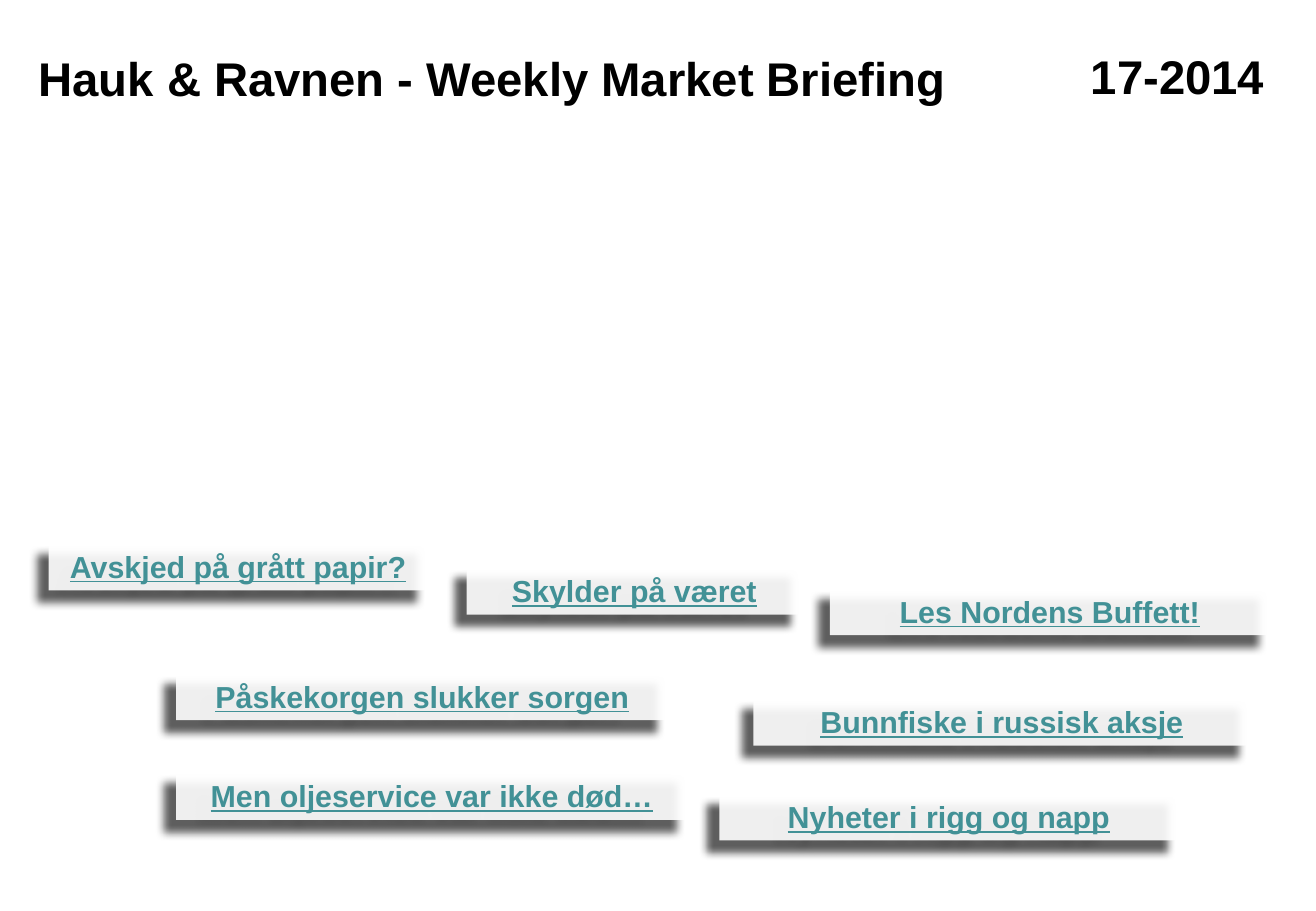
from dataclasses import dataclass

from lxml.etree import SubElement
from pptx import Presentation
from pptx.dml.color import RGBColor
from pptx.enum.shapes import MSO_SHAPE as Shape
from pptx.enum.text import MSO_ANCHOR as Anchor, MSO_AUTO_SIZE as AutoSize, PP_ALIGN as Align
from pptx.oxml.ns import qn
from pptx.util import Inches, Pt


@dataclass(frozen=True)
class Theme:
    font: str = "Arial"
    ink: str = "000000"
    link: str = "429196"
    panel: str = "FFFFFF"
    panel_opacity: int = 90
    shadow_opacity: int = 70
    shadow_blur: int = 5
    shadow_distance: int = 10
    shadow_angle: int = 135
    title_size: int = 28
    link_size: int = 18


THEME = Theme()
BLANK_LAYOUT = 6
HEADLINE_HEIGHT = 5.33

# Left, top, width and height in percent of the slide
TITLE_BOX = (2.03, 3.87, 87.26, 8.4)
ISSUE_BOX = (81.99, 4.53, 15.24, 7.6)

# Text, then left, top and width in percent of the slide
HEADLINES = [
    ("Avskjed på grått papir?", 3.69, 59.47, 28.81),
    ("Skylder på været", 35.46, 62.13, 25.48),
    ("Påskekorgen slukker sorgen", 13.39, 73.73, 37.4),
    ("Les Nordens Buffett!", 63.07, 64.4, 33.43),
    ("Bunnfiske i russisk aksje", 57.25, 76.53, 37.77),
    ("Men oljeservice var ikke død…", 13.39, 84.67, 38.87),
    ("Nyheter i rigg og napp", 54.66, 86.93, 34.9),
]


def place(deck, left, top, width, height):
    """Turn percentages of the slide into lengths."""
    across, down = deck.slide_width / 100, deck.slide_height / 100
    return round(left * across), round(top * down), round(width * across), round(height * down)


def write(box, text, color, frame_format, align=None, **font_format):
    frame = box.text_frame
    for name, value in frame_format.items():
        setattr(frame, name, value)
    para = frame.paragraphs[0]
    para.alignment = align
    span = para.add_run()
    span.text = text
    for name, value in {"name": THEME.font, "bold": True, **font_format}.items():
        setattr(span.font, name, value)
    span.font.color.rgb = RGBColor.from_string(color)


def add_alpha(color_element, percent):
    SubElement(color_element, qn("a:alpha"), val=str(percent * 1000))


def add_shadow(box):
    box.shadow.inherit = False
    effects = box._element.spPr.find(qn("a:effectLst"))
    shadow = SubElement(
        effects, qn("a:outerShdw"),
        blurRad=str(Pt(THEME.shadow_blur)), dist=str(Pt(THEME.shadow_distance)),
        dir=str(THEME.shadow_angle * 60000), algn="tr", rotWithShape="0")
    add_alpha(SubElement(shadow, qn("a:srgbClr"), val=THEME.ink), THEME.shadow_opacity)


def add_heading(page, area, text, **frame_format):
    box = page.shapes.add_textbox(*area)
    write(box, text, THEME.ink, frame_format, size=Pt(THEME.title_size))


def add_headline(page, area, text):
    box = page.shapes.add_shape(Shape.RECTANGLE, *area)
    box.fill.solid()
    box.fill.fore_color.rgb = RGBColor.from_string(THEME.panel)
    add_alpha(box._element.spPr.find(qn("a:solidFill"))[0], THEME.panel_opacity)
    box.line.fill.background()
    add_shadow(box)
    frame_format = {"word_wrap": True, "vertical_anchor": Anchor.TOP,
                    "auto_size": AutoSize.SHAPE_TO_FIT_TEXT}
    write(box, text, THEME.link, frame_format, Align.CENTER,
          size=Pt(THEME.link_size), underline=True)


def build_cover(deck):
    page = deck.slides.add_slide(deck.slide_layouts[BLANK_LAYOUT])
    add_heading(page, place(deck, *TITLE_BOX), "Hauk & Ravnen - Weekly Market Briefing",
                word_wrap=True, vertical_anchor=Anchor.BOTTOM)
    add_heading(page, place(deck, *ISSUE_BOX), "17-2014",
                word_wrap=False, auto_size=AutoSize.SHAPE_TO_FIT_TEXT)
    for text, left, top, width in HEADLINES:
        add_headline(page, place(deck, left, top, width, HEADLINE_HEIGHT), text)


def main():
    deck = Presentation()
    deck.slide_width, deck.slide_height = Inches(10.83), Inches(7.5)
    build_cover(deck)
    deck.save("out.pptx")


if __name__ == "__main__":
    main()
